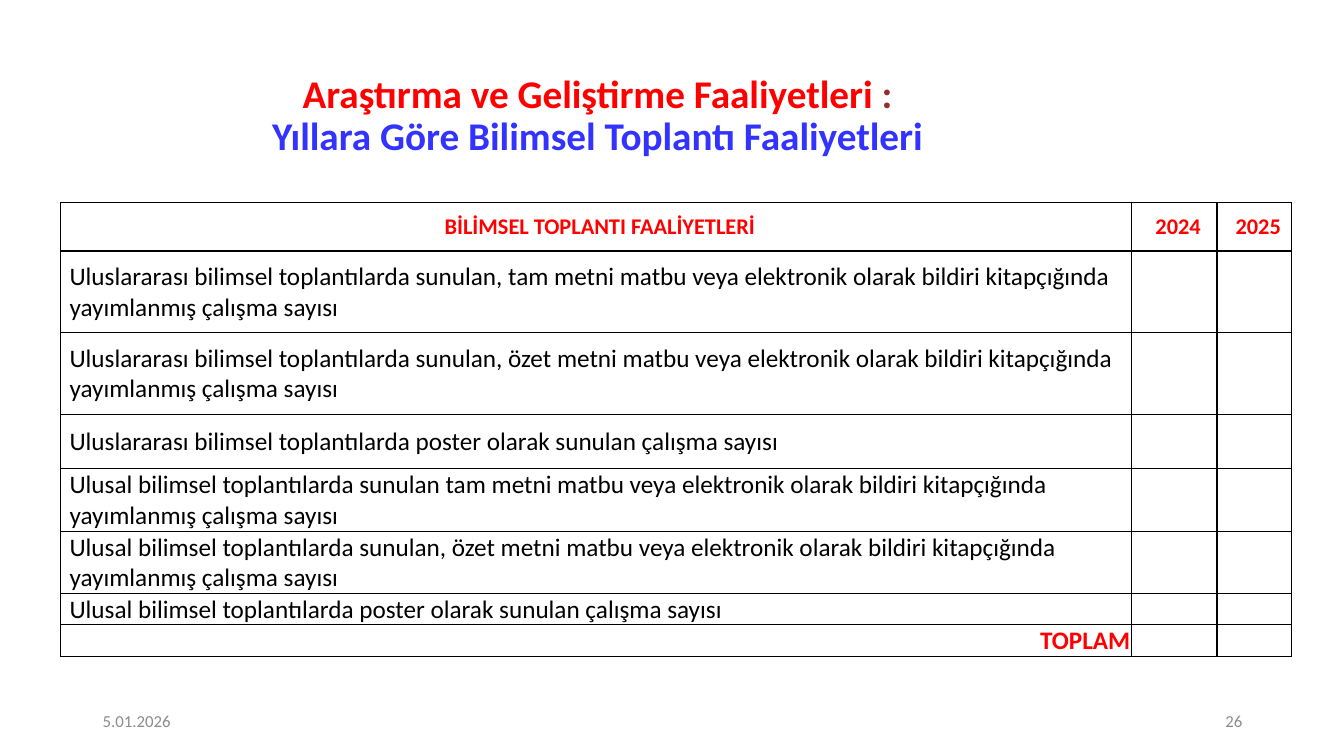
from lxml import etree
from pptx import Presentation
from pptx.dml.color import RGBColor
from pptx.enum.text import MSO_ANCHOR, MSO_AUTO_SIZE, PP_ALIGN
from pptx.oxml.ns import qn
from pptx.util import Pt

PX = 9144
LEFT, CENTER, RIGHT = PP_ALIGN.LEFT, PP_ALIGN.CENTER, PP_ALIGN.RIGHT
MIDDLE = MSO_ANCHOR.MIDDLE
NO_AUTOFIT = MSO_AUTO_SIZE.NONE
COLORS = {"red": "FF0000", "maroon": "962E2E", "blue": "3333FF", "gray": "8C8C8C", "black": "000000"}


def add_run(paragraph, text, size, color, bold=False):
    run = paragraph.add_run()
    run.text = text
    for name, value in {"name": "Calibri", "size": Pt(size), "bold": bold}.items():
        setattr(run.font, name, value)
    run.font.color.rgb = RGBColor.from_string(COLORS[color])


def add_borders(cell):
    properties = cell._tc.get_or_add_tcPr()
    for side in ("lnL", "lnR", "lnT", "lnB"):
        line = etree.SubElement(properties, qn(f"a:{side}"), w=str(Pt(1)))
        fill = etree.SubElement(line, qn("a:solidFill"))
        etree.SubElement(fill, qn("a:srgbClr"), val=COLORS["black"])


presentation = Presentation()
presentation.slide_width = 1333 * PX
presentation.slide_height = 750 * PX
slide = presentation.slides.add_slide(presentation.slide_layouts[5])

title = slide.shapes.title
for name, value in {"left": 25, "top": 82, "width": 1144, "height": 68}.items():
    setattr(title, name, value * PX)
for name, value in {"word_wrap": True, "auto_size": NO_AUTOFIT, "vertical_anchor": MIDDLE}.items():
    setattr(title.text_frame, name, value)
paragraph = title.text_frame.paragraphs[0]
paragraph.alignment = CENTER
paragraph.line_spacing = 0.9
add_run(paragraph, "Araştırma ve Geliştirme Faaliyetleri ", 28, "red", True)
add_run(paragraph, ": ", 28, "maroon", True)
paragraph.add_line_break()
add_run(paragraph, "Yıllara Göre Bilimsel Toplantı Faaliyetleri ", 28, "blue", True)

for left, text, alignment in ((92, "5.01.2026", LEFT), (942, "26", RIGHT)):
    footer = slide.shapes.add_textbox(left * PX, 695 * PX, 300 * PX, 40 * PX)
    footer.text_frame.word_wrap = True
    footer.text_frame.vertical_anchor = MIDDLE
    paragraph = footer.text_frame.paragraphs[0]
    paragraph.alignment = alignment
    add_run(paragraph, text, 12, "gray")

activities = [
    "Uluslararası bilimsel toplantılarda sunulan, tam metni matbu veya elektronik olarak bildiri kitapçığında yayımlanmış çalışma sayısı",
    "Uluslararası bilimsel toplantılarda sunulan, özet metni matbu veya elektronik olarak bildiri kitapçığında yayımlanmış çalışma sayısı",
    "Uluslararası bilimsel toplantılarda poster olarak sunulan çalışma sayısı",
    "Ulusal bilimsel toplantılarda sunulan tam metni matbu veya elektronik olarak bildiri kitapçığında yayımlanmış çalışma sayısı",
    "Ulusal bilimsel toplantılarda sunulan, özet metni matbu veya elektronik olarak bildiri kitapçığında yayımlanmış çalışma sayısı",
    "Ulusal bilimsel toplantılarda poster olarak sunulan çalışma sayısı",
]
header = ["BİLİMSEL TOPLANTI FAALİYETLERİ", "2024", "2025"]
rows = [header] + [[activity, "", ""] for activity in activities] + [["TOPLAM", "", ""]]
row_styles = [(CENTER, 16, "red", True)] + [(LEFT, 18, "black", False)] * len(activities) + [(RIGHT, 18, "red", True)]
column_widths = [1062, 85, 74]
row_heights = [48, 81, 81, 54, 62, 62, 31, 31]
cell_format = {"vertical_anchor": MIDDLE, "margin_left": PX, "margin_right": PX, "margin_top": PX, "margin_bottom": 0}

table = slide.shapes.add_table(
    len(rows), len(header), 60 * PX, 201 * PX, sum(column_widths) * PX, sum(row_heights) * PX
).table
for column, width in zip(table.columns, column_widths):
    column.width = width * PX
for row, height in zip(table.rows, row_heights):
    row.height = height * PX

for row, texts, (alignment, size, color, bold) in zip(table.rows, rows, row_styles):
    for cell, text in zip(row.cells, texts):
        for name, value in cell_format.items():
            setattr(cell, name, value)
        add_borders(cell)
        cell.fill.background()
        if text:
            paragraph = cell.text_frame.paragraphs[0]
            paragraph.alignment = alignment
            paragraph._p.get_or_add_pPr().set("marL", str(8 * PX))
            add_run(paragraph, text, size, color, bold)

presentation.save("out.pptx")
